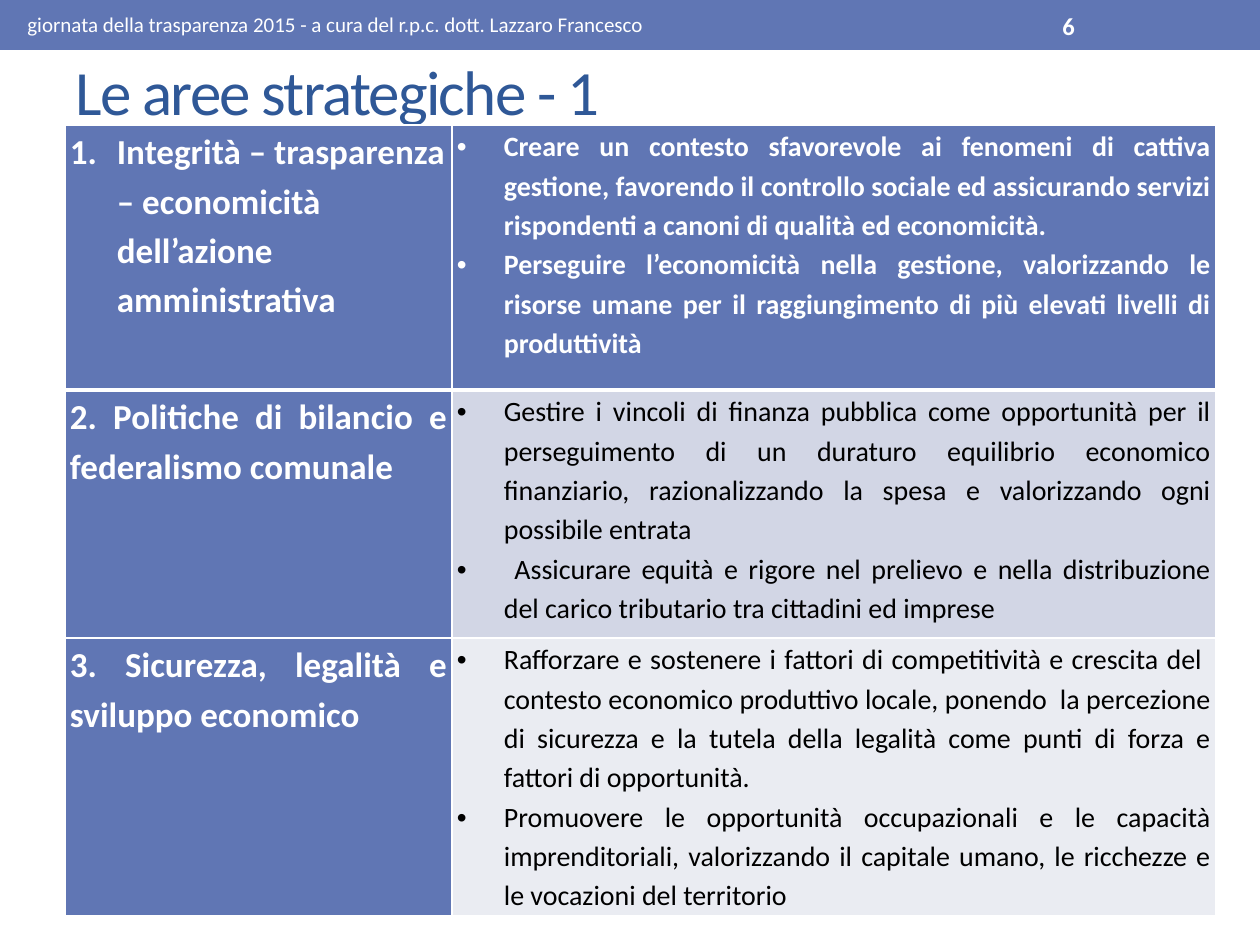
"""Build the slide on the strategic areas, with its header band and table."""
from dataclasses import dataclass

from lxml.etree import SubElement
from pptx import Presentation
from pptx.dml.color import RGBColor as Rgb
from pptx.enum.shapes import MSO_SHAPE as Shape
from pptx.enum.text import MSO_ANCHOR as Anchor, PP_ALIGN as Align
from pptx.oxml.ns import qn
from pptx.util import Pt


@dataclass(frozen=True)
class Theme:
    font: str = "Calibri"
    blue: str = "6076B4"
    title: str = "2F5897"
    white: str = "FFFFFF"
    black: str = "000000"
    pale: str = "D2D6E5"
    paler: str = "EAECF2"
    title_size: int = 36
    area_size: int = 20
    goal_size: int = 16
    number_size: int = 14
    footer_size: int = 12
    leading: float = 1.15


@dataclass(frozen=True)
class Label:
    text: str
    place: tuple[int, int, int, int]
    size: int
    color: str
    bold: bool = False
    tracking: int = 0


@dataclass(frozen=True)
class Area:
    name: str
    goals: tuple[str, ...]
    height: int
    fill: str
    ink: str
    bold: bool = False
    numbered: bool = False
    rule: int = 1


THEME = Theme()
EMU_PER_PX = 914400 / 126
PAGE = (1260, 945)
BAND = (0, 0, 1260, 50)
TABLE_ORIGIN = (65, 125)
COLUMNS = (387, 764)
CELL_INSET = 5
INDENT = 47

LABELS = (
    Label("Le aree strategiche - 1", (63, 55, 1134, 70), THEME.title_size,
          THEME.title, tracking=-100),
    Label("giornata della trasparenza 2015 - a cura del r.p.c. dott. Lazzaro Francesco",
          (15, 3, 1024, 43), THEME.footer_size, THEME.white),
    Label("6", (1050, 3, 147, 45), THEME.number_size, THEME.white, bold=True),
)

AREAS = (
    Area("Integrità – trasparenza – economicità dell’azione amministrativa", (
        "Creare un contesto sfavorevole ai fenomeni di cattiva gestione, favorendo il "
        "controllo sociale ed assicurando servizi rispondenti a canoni di qualità ed "
        "economicità.",
        "Perseguire l’economicità nella gestione, valorizzando le risorse umane per il "
        "raggiungimento di più elevati livelli di produttività",
    ), 265, THEME.blue, THEME.white, bold=True, numbered=True, rule=3),
    Area("2. Politiche di bilancio e federalismo comunale", (
        "Gestire i vincoli di finanza pubblica come opportunità per il perseguimento di un "
        "duraturo equilibrio economico finanziario, razionalizzando la spesa e valorizzando "
        "ogni possibile entrata",
        " Assicurare equità e rigore nel prelievo e nella distribuzione del carico "
        "tributario tra cittadini ed imprese",
    ), 248, THEME.pale, THEME.black),
    Area("3. Sicurezza, legalità e sviluppo economico", (
        "Rafforzare e sostenere i fattori di competitività e crescita del  contesto "
        "economico produttivo locale, ponendo  la percezione di sicurezza e la tutela della "
        "legalità come punti di forza e fattori di opportunità.",
        "Promuovere le opportunità occupazionali e le capacità imprenditoriali, "
        "valorizzando il capitale umano, le ricchezze e le vocazioni del territorio",
    ), 278, THEME.paler, THEME.black),
)


def px(length: int) -> int:
    return round(length * EMU_PER_PX)


def apply_format(target, values: dict) -> None:
    for name, value in values.items():
        setattr(target, name, value)


def write(para, text: str, size: int, color: str, bold: bool = False):
    span = para.add_run()
    span.text = text
    apply_format(span.font, {"name": THEME.font, "size": Pt(size), "bold": bold})
    span.font.color.rgb = Rgb.from_string(color)
    return span


def paint(shape, color: str) -> None:
    shape.fill.solid()
    shape.fill.fore_color.rgb = Rgb.from_string(color)


def draw_band(page) -> None:
    band = page.shapes.add_shape(Shape.RECTANGLE, *map(px, BAND))
    band.shadow.inherit = False
    band.line.fill.background()
    paint(band, THEME.blue)


def draw_label(page, label: Label) -> None:
    frame = page.shapes.add_textbox(*map(px, label.place)).text_frame
    apply_format(frame, {"word_wrap": True, "vertical_anchor": Anchor.MIDDLE})
    span = write(frame.paragraphs[0], label.text, label.size, label.color, label.bold)
    if label.tracking:
        span.font._element.set("spc", str(label.tracking))


def add_marker(para, tag: str, **attributes: str) -> None:
    properties = para._p.get_or_add_pPr()
    properties.set("marL", str(px(INDENT)))
    properties.set("indent", str(-px(INDENT)))
    SubElement(properties, qn("a:buFont"), typeface="Arial" if tag == "a:buChar" else THEME.font)
    SubElement(properties, qn(tag), **attributes)


def add_borders(cell, bottom: int, top: int) -> None:
    properties = cell._tc.get_or_add_tcPr()
    widths = {"a:lnL": 1, "a:lnR": 1, "a:lnT": top, "a:lnB": bottom}
    for place, (tag, width) in enumerate(widths.items()):
        line = SubElement(properties, qn(tag), w=str(Pt(width)))
        SubElement(SubElement(line, qn("a:solidFill")), qn("a:srgbClr"), val=THEME.white)
        properties.insert(place, line)


def style_cell(cell, fill: str, bottom: int, top: int) -> None:
    apply_format(cell, {"margin_left": px(CELL_INSET), "margin_right": px(CELL_INSET),
                        "margin_top": 0, "margin_bottom": 0,
                        "vertical_anchor": Anchor.TOP})
    paint(cell, fill)
    add_borders(cell, bottom, top)


def fill_area(name_cell, goals_cell, area: Area, top: int) -> None:
    style_cell(name_cell, THEME.blue, area.rule, top)
    style_cell(goals_cell, area.fill, area.rule, top)
    para = name_cell.text_frame.paragraphs[0]
    apply_format(para, {"line_spacing": THEME.leading,
                        "alignment": Align.LEFT if area.numbered else Align.JUSTIFY})
    if area.numbered:
        add_marker(para, "a:buAutoNum", type="arabicPeriod")
    write(para, area.name, THEME.area_size, THEME.white, bold=True)
    frame = goals_cell.text_frame
    for index, goal in enumerate(area.goals):
        para = frame.add_paragraph() if index else frame.paragraphs[0]
        apply_format(para, {"line_spacing": THEME.leading, "alignment": Align.JUSTIFY})
        add_marker(para, "a:buChar", char="•")
        write(para, goal, THEME.goal_size, area.ink, area.bold)


def draw_table(page) -> None:
    size = (sum(COLUMNS), sum(area.height for area in AREAS))
    table = page.shapes.add_table(len(AREAS), len(COLUMNS),
                                  *map(px, TABLE_ORIGIN + size)).table
    for column, width in zip(table.columns, COLUMNS):
        column.width = px(width)
    top = 1
    for row, area in zip(table.rows, AREAS):
        row.height = px(area.height)
        fill_area(*row.cells, area, top)
        top = area.rule


def main() -> None:
    deck = Presentation()
    apply_format(deck, {"slide_width": px(PAGE[0]), "slide_height": px(PAGE[1])})
    page = deck.slides.add_slide(deck.slide_layouts[6])
    draw_band(page)
    for label in LABELS:
        draw_label(page, label)
    draw_table(page)
    deck.save("out.pptx")


if __name__ == "__main__":
    main()
